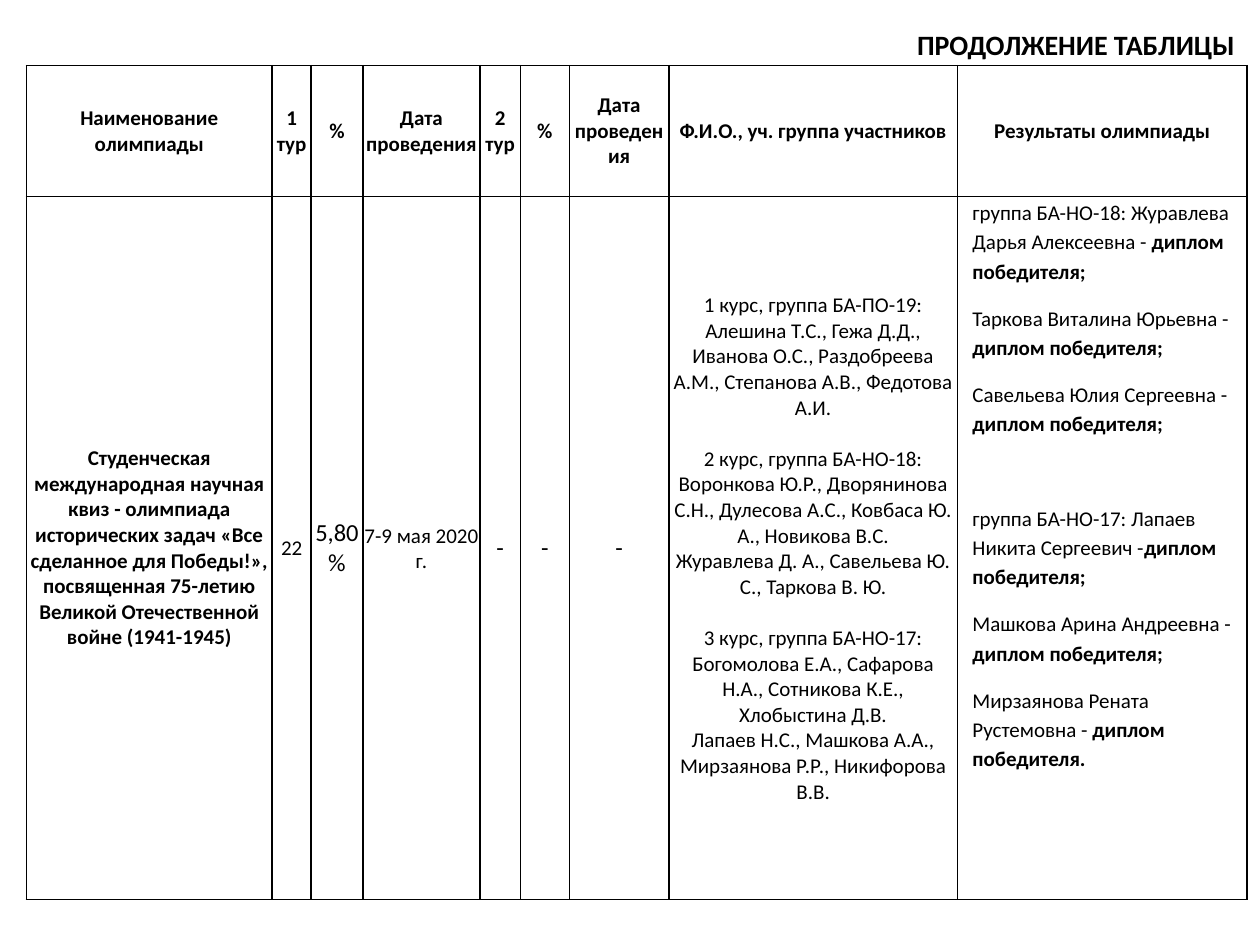
"""Build the slide with the continued table of olympiad results."""
from dataclasses import dataclass

import lxml.etree
import pptx
import pptx.dml.color
import pptx.enum.text
import pptx.oxml.ns
import pptx.util

BLACK = pptx.dml.color.RGBColor(0x00, 0x00, 0x00)
FONT = "Calibri"
BORDER_WIDTH = pptx.util.Pt(1)
ALIGN = pptx.enum.text.PP_ALIGN
MIDDLE = pptx.enum.text.MSO_ANCHOR.MIDDLE
TOP = pptx.enum.text.MSO_ANCHOR.TOP

PAGE_WIDTH, PAGE_HEIGHT = pptx.util.Inches(10), pptx.util.Inches(7.5)
GRID_COLUMNS = 1000
GRID_UNIT = PAGE_WIDTH // GRID_COLUMNS
COLUMN_SPANS = (195, 31, 41, 93, 32, 39, 79, 229, 230)
ROW_SPANS = (104, 558)
TABLE_LEFT, TABLE_TOP = 21, 52
BLANK_LINE = 14.65
GROUP_GAP = 27


@dataclass(frozen=True)
class Span:
    text: str
    size: float = 12
    bold: bool = False


@dataclass(frozen=True)
class Para:
    spans: tuple[Span, ...]
    align: int = ALIGN.CENTER
    before: float = 0
    after: float = 0
    line: float = 1


@dataclass(frozen=True)
class Entry:
    paras: tuple[Para, ...]
    anchor: int = MIDDLE
    side: float = 0
    top: float = 0


def grid(units: float) -> int:
    return pptx.util.Emu(round(units * GRID_UNIT))


def plain(text: str, size: float = 12, bold: bool = False, inset: float = 0) -> Entry:
    return Entry((Para((Span(text, size, bold),)),), side=inset, top=inset)


def member(text: str, before: float = 0) -> Para:
    return Para((Span(text),), before=before)


def award(name: str, end: str = ";", before: float = 0) -> Para:
    spans = (Span(name), Span(f"диплом победителя{end}", bold=True))
    return Para(spans, ALIGN.LEFT, before, after=10, line=1.15)


HEADINGS = (
    "Наименование олимпиады", "1 тур", "%", "Дата проведения", "2 тур", "%",
    "Дата проведения", "Ф.И.О., уч. группа участников", "Результаты олимпиады",
)
MEMBERS = (
    member("1 курс, группа БА-ПО-19: Алешина Т.С., Гежа Д.Д., Иванова О.С., "
           "Раздобреева А.М., Степанова А.В., Федотова А.И."),
    member("2 курс, группа БА-НО-18: Воронкова Ю.Р., Дворянинова С.Н., "
           "Дулесова А.С., Ковбаса Ю. А., Новикова В.С.", BLANK_LINE),
    member("Журавлева Д. А., Савельева Ю. С., Таркова В. Ю."),
    member("3 курс, группа БА-НО-17: Богомолова Е.А., Сафарова Н.А., "
           "Сотникова К.Е., Хлобыстина Д.В.", BLANK_LINE),
    member("Лапаев Н.С., Машкова А.А., Мирзаянова Р.Р., Никифорова В.В."),
)
AWARDS = (
    award("группа БА-НО-18: Журавлева Дарья Алексеевна - "),
    award("Таркова Виталина Юрьевна - "),
    award("Савельева Юлия Сергеевна - "),
    award("группа БА-НО-17: Лапаев Никита Сергеевич -", before=GROUP_GAP),
    award("Машкова Арина Андреевна - "),
    award("Мирзаянова Рената Рустемовна - ", "."),
)
OLYMPIAD = (
    plain("Студенческая международная научная квиз - олимпиада исторических задач "
          "«Все сделанное для Победы!», посвященная 75-летию Великой Отечественной "
          "войне (1941-1945)", bold=True),
    plain("22"),
    plain("5,80%", 14),
    plain("7-9 мая 2020 г.", inset=1),
    *(plain("-", 14) for _ in range(3)),
    Entry(MEMBERS, side=1, top=1),
    Entry(AWARDS, TOP, side=12),
)
ROWS = (tuple(plain(heading, bold=True) for heading in HEADINGS), OLYMPIAD)


def write(frame: pptx.text.text.TextFrame, paras: tuple[Para, ...]) -> None:
    frame.word_wrap = True
    for index, item in enumerate(paras):
        para = frame.add_paragraph() if index else frame.paragraphs[0]
        para.alignment = item.align
        para.space_before = pptx.util.Pt(item.before)
        para.space_after = pptx.util.Pt(item.after)
        para.line_spacing = float(item.line)
        for span in item.spans:
            run = para.add_run()
            run.text = span.text
            run.font.name = FONT
            run.font.size = pptx.util.Pt(span.size)
            run.font.bold = span.bold
            run.font.color.rgb = BLACK


def add_borders(cell: pptx.table._Cell) -> None:
    qn = pptx.oxml.ns.qn
    properties = cell._tc.get_or_add_tcPr()
    for side in ("L", "R", "T", "B"):
        line = lxml.etree.SubElement(properties, qn(f"a:ln{side}"), w=str(BORDER_WIDTH))
        fill = lxml.etree.SubElement(line, qn("a:solidFill"))
        lxml.etree.SubElement(fill, qn("a:srgbClr"), val=str(BLACK))


def fill_cell(cell: pptx.table._Cell, entry: Entry) -> None:
    cell.margin_left = cell.margin_right = grid(entry.side)
    cell.margin_top, cell.margin_bottom = grid(entry.top), 0
    cell.vertical_anchor = entry.anchor
    add_borders(cell)
    cell.fill.background()
    write(cell.text_frame, entry.paras)


def add_title(page: pptx.slide.Slide) -> None:
    box = page.shapes.add_textbox(grid(705), grid(13), grid(285), grid(45))
    box.text_frame.vertical_anchor = MIDDLE
    title = Span("ПРОДОЛЖЕНИЕ ТАБЛИЦЫ", 16, True)
    write(box.text_frame, (Para((title,), ALIGN.RIGHT),))


def add_results(page: pptx.slide.Slide) -> None:
    table = page.shapes.add_table(
        len(ROW_SPANS), len(COLUMN_SPANS), grid(TABLE_LEFT), grid(TABLE_TOP),
        grid(sum(COLUMN_SPANS)), grid(sum(ROW_SPANS)),
    ).table
    table.first_row = table.horz_banding = False
    for column, width in zip(table.columns, COLUMN_SPANS):
        column.width = grid(width)
    for row, height, entries in zip(table.rows, ROW_SPANS, ROWS):
        row.height = grid(height)
        for cell, entry in zip(row.cells, entries):
            fill_cell(cell, entry)


def main() -> None:
    deck = pptx.Presentation()
    deck.slide_width, deck.slide_height = PAGE_WIDTH, PAGE_HEIGHT
    page = deck.slides.add_slide(deck.slide_layouts[6])
    add_title(page)
    add_results(page)
    deck.save("out.pptx")


if __name__ == "__main__":
    main()
